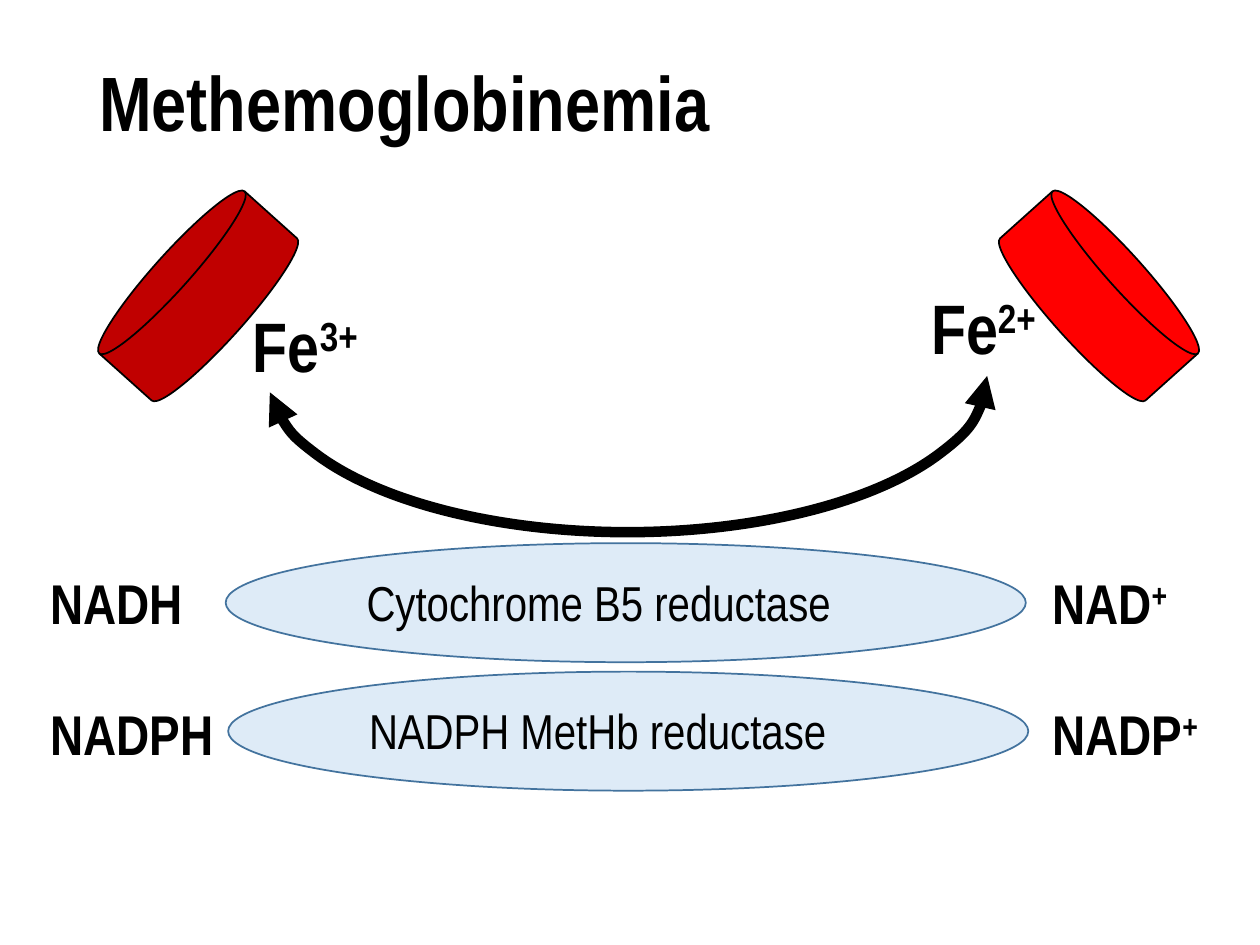
from lxml import etree
from pptx import Presentation
from pptx.dml.color import RGBColor
from pptx.enum.shapes import MSO_SHAPE
from pptx.enum.text import MSO_ANCHOR, MSO_AUTO_SIZE
from pptx.oxml.ns import qn
from pptx.util import Cm, Pt

ARC = MSO_SHAPE.ARC
DISK = MSO_SHAPE.FLOWCHART_MAGNETIC_DISK
OVAL = MSO_SHAPE.OVAL
MIDDLE = MSO_ANCHOR.MIDDLE
TOP = MSO_ANCHOR.TOP
FIT_SHAPE = MSO_AUTO_SIZE.SHAPE_TO_FIT_TEXT
NO_FIT = MSO_AUTO_SIZE.NONE

FONT = "Arial Narrow"
BLACK = "000000"
VENOUS_RED = "C00000"
BRIGHT_RED = "FF0000"
PALE_BLUE = "DEEBF7"
STEEL_BLUE = "43739E"


def rgb(code):
    return RGBColor.from_string(code)


def add_text(shapes, box, text, superscript="", size=32, bold=True,
             wrap=False, anchor=TOP, spacing=1.0):
    label = shapes.add_textbox(*map(Cm, box))
    frame = label.text_frame
    frame.word_wrap = wrap
    frame.auto_size = NO_FIT if wrap else FIT_SHAPE
    frame.vertical_anchor = anchor
    paragraph = frame.paragraphs[0]
    paragraph.line_spacing = spacing
    for part, baseline in ((text, 0), (superscript, 30000)):
        if not part:
            continue
        run = paragraph.add_run()
        run.text = part
        run.font.name = FONT
        run.font.size = Pt(size)
        run.font.bold = bold
        run.font.color.rgb = rgb(BLACK)
        if baseline:
            run.font._element.set("baseline", str(baseline))


def add_outline(shapes, kind, box, line, width=1, fill=None, rotation=0):
    shape = shapes.add_shape(kind, *map(Cm, box))
    shape.shadow.inherit = False
    shape.rotation = rotation
    shape.line.color.rgb = rgb(line)
    shape.line.width = Pt(width)
    if fill:
        shape.fill.solid()
        shape.fill.fore_color.rgb = rgb(fill)
    else:
        shape.fill.background()
    return shape


def add_blood_cell(shapes, left, fill, rotation, mirrored=False):
    cell = add_outline(shapes, DISK, (left, 4.9, 4.39, 2.13), BLACK,
                       fill=fill, rotation=rotation)
    if mirrored:
        cell.element.spPr.find(qn("a:xfrm")).set("flipH", "1")


def add_exchange_arrow(shapes):
    arrow = add_outline(shapes, ARC, (9.5, 0.33, 6.3, 14.5), BLACK,
                        width=6, rotation=90)
    arrow.adjustments[0] = 162
    arrow.adjustments[1] = 52.421
    line = arrow.element.spPr.find(qn("a:ln"))
    for end in ("a:headEnd", "a:tailEnd"):
        etree.SubElement(line, qn(end)).set("type", "triangle")


def add_enzyme(shapes, left, top, name, name_width):
    enzyme = shapes.add_group_shape().shapes
    add_outline(enzyme, OVAL, (left, top, 16.13, 2.4), STEEL_BLUE,
                fill=PALE_BLUE)
    add_text(enzyme, (left + 2.59, top + 0.46, name_width, 1.45), name,
             size=28, bold=False)


def main():
    deck = Presentation()
    deck.slide_width, deck.slide_height = Cm(25.4), Cm(19.05)
    shapes = deck.slides.add_slide(deck.slide_layouts[6]).shapes

    add_text(shapes, (1.75, 1.02, 21.9, 2.26), "Methemoglobinemia",
             size=44, wrap=True, anchor=MIDDLE, spacing=0.9)

    add_blood_cell(shapes, 19.96, BRIGHT_RED, 48.1, mirrored=True)
    add_text(shapes, (18.52, 5.61, 2.82, 1.96), "Fe", "2+", size=40)
    add_blood_cell(shapes, 1.8, VENOUS_RED, 311.9)
    add_text(shapes, (4.85, 5.97, 2.82, 1.96), "Fe", "3+", size=40)
    add_exchange_arrow(shapes)

    add_enzyme(shapes, 4.55, 10.95, "Cytochrome B5 reductase", 9.96)
    add_enzyme(shapes, 4.6, 13.54, "NADPH MetHb reductase", 9.83)

    cofactors = (("NADH", 3.23, "NAD", 2.92), ("NADPH", 3.84, "NADP", 3.66))
    for row, (reduced, reduced_width, oxidized, oxidized_width) in enumerate(cofactors):
        top = 11.33 + row * 2.64
        add_text(shapes, (0.76, top, reduced_width, 1.63), reduced)
        add_text(shapes, (20.96, top, oxidized_width, 1.63), oxidized, "+")

    deck.save("out.pptx")


if __name__ == "__main__":
    main()
